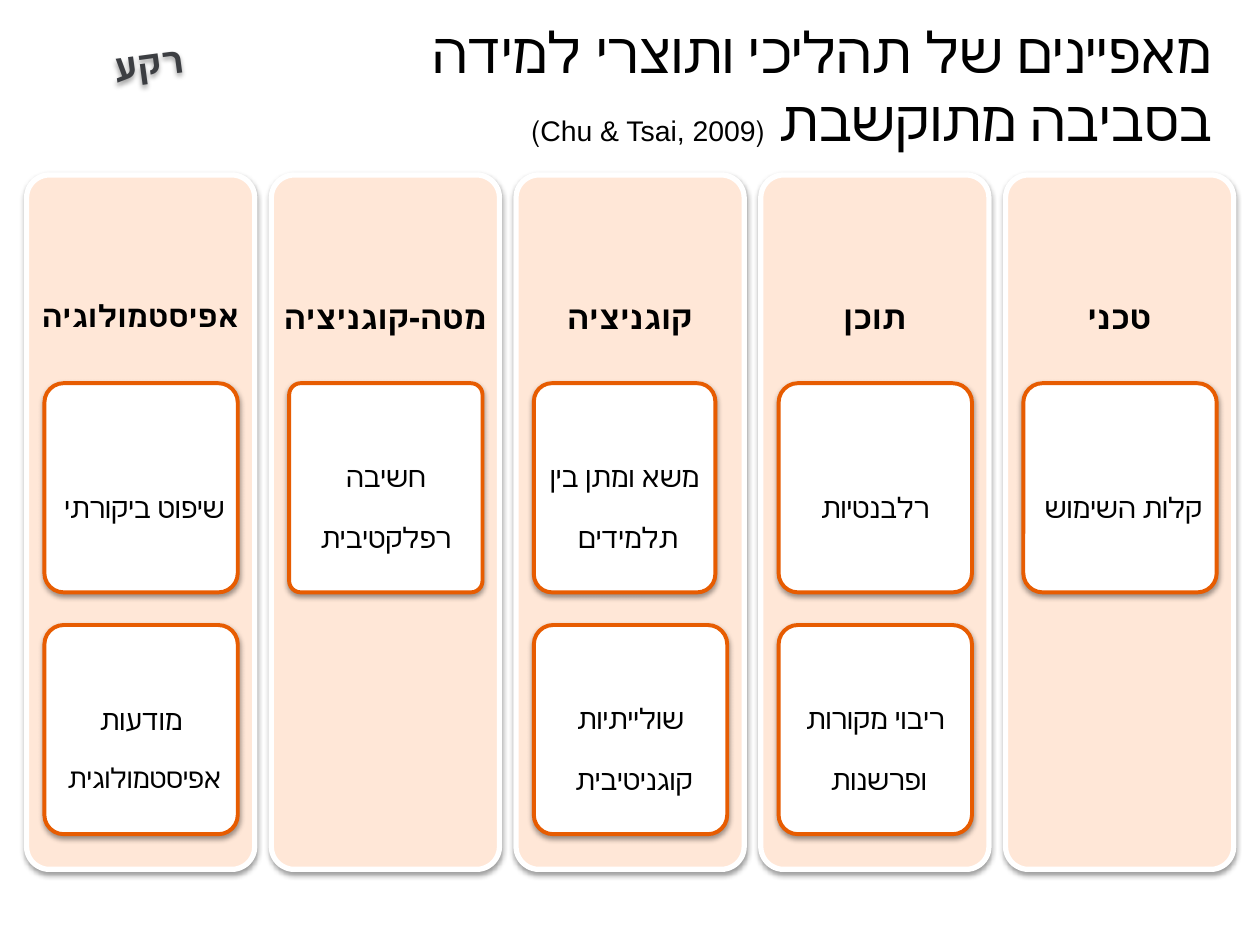
from lxml import etree
from pptx import Presentation
from pptx import util as u
from pptx.dml.color import RGBColor
from pptx.enum import shapes, text
from pptx.oxml.ns import qn

Pt = u.Pt
HUES = {"ink": "000000", "tag": "3C3E42", "panel": "FFE7D7",
        "white": "FFFFFF", "edge": "E75C01", "shade": "000000"}
FACE = "Arial"
TITLE = [("מאפיינים של תהליכי ותוצרי למידה \vבסביבה מתוקשבת ", 32.4),
         ("(Chu & Tsai, 2009)", 16.2)]
TAG = [("רקע", 36)]
COLS = [
    ([("אפיסטמולוגיה", 30)],
     [[("שיפוט ביקורתי ", 28)], [("מודעות ", 28), ("אפיסטמולוגית ", 27)]]),
    ([("מטה-קוגניציה", 32)], [[("חשיבה רפלקטיבית", 28)]]),
    ([("קוגניציה", 32)],
     [[("משא ומתן בין תלמידים ", 28)], [("שולייתיות קוגניטיבית ", 28)]]),
    ([("תוכן", 32)], [[("רלבנטיות", 28)], [("ריבוי מקורות ופרשנות ", 28)]]),
    ([("טכני", 32)], [[("קלות השימוש ", 28)]]),
]
LEFT, TOP, STEP, WIDE, HIGH = 15.2, 100, 139.85, 130.4, 396.8
INSET, ROW, GAP, TILE_W, TILE_H = 10.2, 219, 138.2, 110.5, 119.5
WIDTHS = {(2, 0): 103.7}
ROUNDS = {(1, 0): 0.06}


def shade(node):
    """Add a soft drop shadow to a property element."""
    fx = etree.SubElement(node, qn("a:effectLst"))
    cast = etree.SubElement(fx, qn("a:outerShdw"), blurRad=str(Pt(3.1)),
                            dist=str(Pt(1.6)), dir="5400000", rotWithShape="0")
    hue = etree.SubElement(cast, qn("a:srgbClr"), val=HUES["shade"])
    etree.SubElement(hue, qn("a:alpha"), val="38000")


def write(frame, runs, align=text.PP_ALIGN.CENTER, hue="ink", bold=False,
          rtl=True, base=-25, space=None, after=None):
    """Fill a text frame with formatted runs."""
    para = frame.paragraphs[0]
    para.alignment = align
    if space:
        para.line_spacing = space
    props = para._p.get_or_add_pPr()
    if rtl:
        props.set("rtl", "1")
    if after:
        gap = etree.SubElement(props, qn("a:spcAft"))
        etree.SubElement(gap, qn("a:spcPct"), val=str(after * 1000))
    for words, size in runs:
        for i, part in enumerate(words.split("\v")):
            if i:
                para.add_line_break()
            run = para.add_run()
            run.text = part
            font = run.font
            font.size, font.bold, font.name = Pt(size), bold, FACE
            font.color.rgb = RGBColor.from_string(HUES[hue])
            if base:
                run._r.get_or_add_rPr().set("baseline", str(base * 1000))


def card(slide, box, runs, fill, edge, line, pads, bend=0.1, bold=False):
    """Draw a rounded card with centred text."""
    shape = slide.shapes.add_shape(shapes.MSO_SHAPE.ROUNDED_RECTANGLE,
                                   *map(Pt, box))
    shape.adjustments[0] = bend
    shape.fill.solid()
    shape.fill.fore_color.rgb = RGBColor.from_string(HUES[fill])
    shape.line.color.rgb = RGBColor.from_string(HUES[edge])
    shape.line.width = Pt(line)
    shade(shape._element.spPr)
    frame = shape.text_frame
    frame.word_wrap = True
    frame.vertical_anchor = text.MSO_ANCHOR.MIDDLE
    (frame.margin_left, frame.margin_top,
     frame.margin_right, frame.margin_bottom) = map(Pt, pads)
    write(frame, runs, bold=bold, space=0.9, after=35)


def main():
    """Build the slide."""
    deck = Presentation()
    deck.slide_width, deck.slide_height = Pt(720), Pt(540)
    slide = deck.slides.add_slide(deck.slide_layouts[5])
    title = slide.shapes.title
    title.left, title.top, title.width, title.height = map(
        Pt, (19.4, 20.2, 680.4, 56.2))
    frame = title.text_frame
    frame.auto_size = text.MSO_AUTO_SIZE.NONE
    frame.vertical_anchor = text.MSO_ANCHOR.MIDDLE
    write(frame, TITLE, align=text.PP_ALIGN.RIGHT, base=0)
    for col, (head, tiles) in enumerate(COLS):
        left = LEFT + col * STEP
        card(slide, (left, TOP, WIDE, HIGH), head, "panel", "white", 3,
             (2, 5, 2, 264.2), bold=True)
        for row, runs in enumerate(tiles):
            box = (left + INSET, ROW + row * GAP,
                   WIDTHS.get((col, row), TILE_W), TILE_H)
            card(slide, box, runs, "white", "edge", 2.25, (2, 4.3, 2, 4.3),
                 bend=ROUNDS.get((col, row), 0.1))
    tag = slide.shapes.add_textbox(*map(Pt, (27.4, -4.3, 110.9, 54)))
    tag.rotation = 352.2
    tag.text_frame.word_wrap = False
    shade(tag._element.spPr)
    write(tag.text_frame, TAG, hue="tag", bold=True, rtl=False)
    deck.save("out.pptx")


if __name__ == "__main__":
    main()
